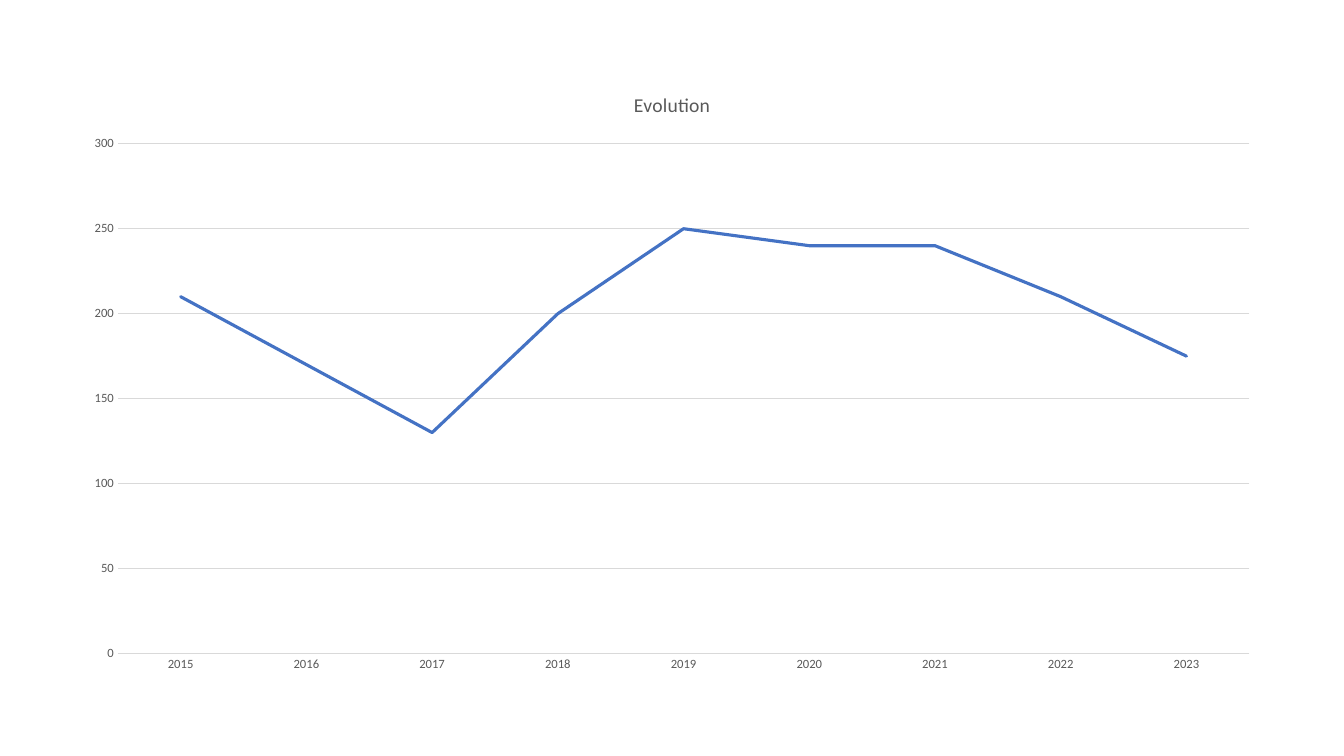
"""Build a slide with a line chart of the evolution from 2015 to 2023."""
from dataclasses import dataclass

from pptx import Presentation
from pptx.chart.data import CategoryChartData
from pptx.dml.color import RGBColor
from pptx.enum.chart import XL_CHART_TYPE as ChartType, XL_MARKER_STYLE as Marker, XL_TICK_MARK as Tick
from pptx.util import Inches, Pt


@dataclass(frozen=True)
class Theme:
    font: str = "Calibri"
    text: RGBColor = RGBColor(0x59, 0x59, 0x59)
    rule: RGBColor = RGBColor(0xD9, 0xD9, 0xD9)
    trend: RGBColor = RGBColor(0x44, 0x72, 0xC4)
    base_size: Pt = Pt(10)
    title_size: Pt = Pt(14)
    label_size: Pt = Pt(9)
    rule_width: Pt = Pt(0.75)
    trend_width: Pt = Pt(2.25)


theme = Theme()


def style_font(font, size):
    font.name = theme.font
    font.size = size
    font.bold = False
    font.color.rgb = theme.text


def style_line(line, color, width):
    line.color.rgb = color
    line.width = width


deck = Presentation()
deck.slide_width = Inches(13.33)
deck.slide_height = Inches(7.5)
slide = deck.slides.add_slide(deck.slide_layouts[6])

yearly = CategoryChartData()
yearly.categories = [str(year) for year in range(2015, 2024)]
yearly.add_series("Series 1", (210, 170, 130, 200, 250, 240, 240, 210, 175))

evolution = slide.shapes.add_chart(
    ChartType.LINE, Inches(0.7), Inches(0.7), Inches(11.93), Inches(6.09), yearly
).chart
style_font(evolution.font, theme.base_size)
evolution.has_legend = False

evolution.has_title = True
evolution.chart_title.include_in_layout = False
heading = evolution.chart_title.text_frame.paragraphs[0].add_run()
heading.text = "Evolution"
style_font(heading.font, theme.title_size)

years, amounts = evolution.category_axis, evolution.value_axis
for axis in (years, amounts):
    axis.major_tick_mark = Tick.NONE
    axis.minor_tick_mark = Tick.NONE
    style_font(axis.tick_labels.font, theme.label_size)

style_line(years.format.line, theme.rule, theme.rule_width)
amounts.minimum_scale = 0
amounts.maximum_scale = 300
amounts.major_unit = 50
amounts.format.line.fill.background()
amounts.has_major_gridlines = True
style_line(amounts.major_gridlines.format.line, theme.rule, theme.rule_width)

plot = evolution.plots[0]
plot.vary_by_categories = False
trend = plot.series[0]
trend.smooth = False
trend.marker.style = Marker.NONE
style_line(trend.format.line, theme.trend, theme.trend_width)
trend.format.line._get_or_add_ln().set("cap", "rnd")

deck.save("out.pptx")
